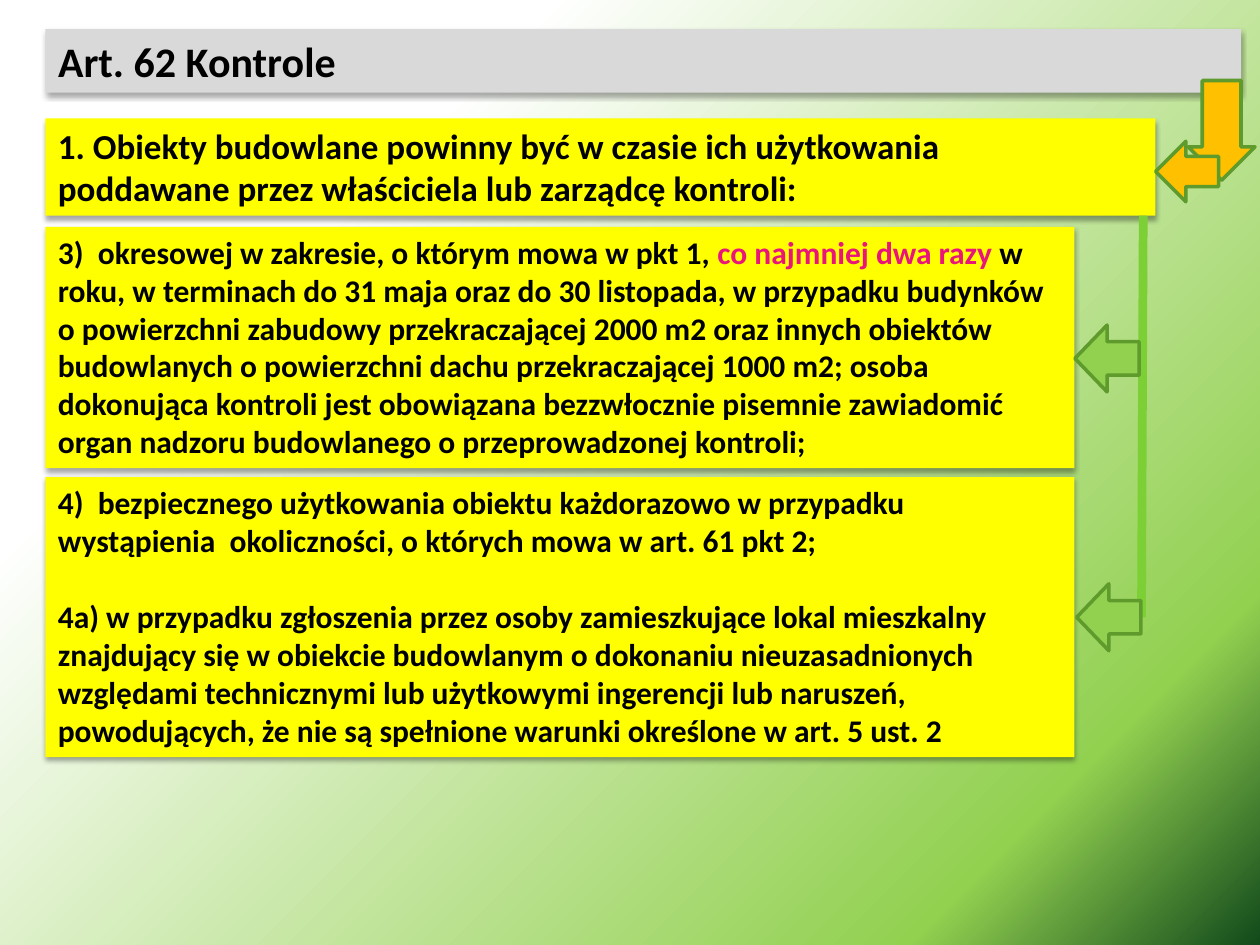
from pptx import Presentation
from pptx.dml.color import RGBColor
from pptx.enum import shapes, text
from pptx.oxml import parse_xml
from pptx.oxml.ns import nsdecls, qn
from pptx.util import Pt

BLACK = RGBColor(0, 0, 0)
PINK = RGBColor(0xEA, 0x15, 0x7A)
GREY = RGBColor(0xD9, 0xD9, 0xD9)
YELLOW = RGBColor(0xFF, 0xFF, 0)
ORANGE = RGBColor(0xFF, 0xC0, 0)
GREEN = RGBColor(0x92, 0xD0, 0x50)
DARK = RGBColor(0x12, 0x4A, 0x1B)
WHITE = RGBColor(0xFF, 0xFF, 0xFF)
EDGE = RGBColor(0x5E, 0x9B, 0x2C)
STEM = RGBColor(0x7C, 0xD0, 0x36)

LEFT = 26
INTRO = ["1. Obiekty budowlane powinny być w czasie ich użytkowania",
         "poddawane przez właściciela lub zarządcę kontroli:"]
TWICE = "co najmniej dwa razy "
POINT3 = ["3) \u00a0okresowej w zakresie, o którym mowa w pkt 1, " + TWICE +
          "w roku, w terminach do 31 maja oraz do 30 listopada, w przypadku "
          "budynków o powierzchni zabudowy przekraczającej 2000 m2 oraz innych "
          "obiektów budowlanych o powierzchni dachu przekraczającej 1000 m2; "
          "osoba dokonująca kontroli jest obowiązana bezzwłocznie pisemnie "
          "zawiadomić organ nadzoru budowlanego o przeprowadzonej kontroli;"]
POINT4 = ["4) \u00a0bezpiecznego użytkowania obiektu każdorazowo w przypadku "
          "wystąpienia  okoliczności, o których mowa w art. 61 pkt 2;",
          "4a) w przypadku zgłoszenia przez osoby zamieszkujące lokal mieszkalny "
          "znajdujący się w obiekcie budowlanym o dokonaniu nieuzasadnionych "
          "względami technicznymi lub użytkowymi ingerencji lub naruszeń, "
          "powodujących, że nie są spełnione warunki określone w art. 5 ust. 2"]


def paint_back(slide):
    """Circular gradient spreading from the bottom right corner."""
    slide.background.fill.gradient()
    old = slide.element.find(".//" + qn("a:gradFill"))
    stops = "".join(
        f'<a:gs pos="{pos * 1000}"><a:srgbClr val="{color}"/></a:gs>'
        for pos, color in ((0, DARK), (16, GREEN), (75, WHITE)))
    old.getparent().replace(old, parse_xml(
        f'<a:gradFill {nsdecls("a")} rotWithShape="1"><a:gsLst>{stops}</a:gsLst>'
        '<a:path path="circle"><a:fillToRect l="100000" t="100000"/></a:path>'
        '</a:gradFill>'))


def place(shape, box):
    shape.left, shape.top, shape.width, shape.height = map(Pt, box)


def add_shade(shape):
    shape.element.spPr.append(parse_xml(
        f'<a:effectLst {nsdecls("a")}><a:outerShdw blurRad="{Pt(3.1)}" '
        f'dist="{Pt(1.8)}" dir="5400000" rotWithShape="0"><a:srgbClr val="000000">'
        '<a:alpha val="35000"/></a:srgbClr></a:outerShdw></a:effectLst>'))


def fill_panel(panel, box, lines, size, color, gap=0, mark=None):
    """Style a panel; mark is a phrase of the text to set in pink."""
    place(panel, box)
    panel.fill.solid()
    panel.fill.fore_color.rgb = color
    panel.line.fill.background()
    add_shade(panel)
    frame = panel.text_frame
    frame.text = "\n".join(lines)
    frame.word_wrap = True
    frame.auto_size = text.MSO_AUTO_SIZE.NONE
    frame.vertical_anchor = text.MSO_ANCHOR.TOP
    for n, para in enumerate(frame.paragraphs):
        para.alignment = text.PP_ALIGN.LEFT
        para.line_spacing = 1.0
        para.space_before = Pt(gap if n else 0)
        if mark and mark in para.text:
            head, tail = para.text.split(mark)
            para.runs[0].text = head
            for part in (mark, tail):
                para.add_run().text = part
        for run in para.runs:
            font = run.font
            font.name, font.size, font.bold = "Calibri", Pt(size), True
            font.color.rgb = PINK if run.text == mark else BLACK


def add_panel(slide, *args, **extra):
    panel = slide.shapes.add_shape(
        shapes.MSO_SHAPE.RECTANGLE, 0, 0, Pt(1), Pt(1))
    fill_panel(panel, *args, **extra)


def add_arrow(slide, box, color, turn=90, neck=0.5):
    arrow = slide.shapes.add_shape(
        shapes.MSO_SHAPE.DOWN_ARROW, *map(Pt, box))
    arrow.adjustments[0] = neck
    arrow.rotation = turn
    arrow.shadow.inherit = False
    arrow.fill.solid()
    arrow.fill.fore_color.rgb = color
    arrow.line.color.rgb = EDGE
    arrow.line.width = Pt(2)


def add_stem(slide, start, end):
    stem = slide.shapes.add_connector(
        shapes.MSO_CONNECTOR.STRAIGHT, *map(Pt, start + end))
    stem.line.color.rgb = STEM
    stem.line.width = Pt(5)
    stem.element.spPr.append(parse_xml(f'<a:effectLst {nsdecls("a")}/>'))


def build_slide(deck):
    slide = deck.slides.add_slide(deck.slide_layouts[5])
    paint_back(slide)
    fill_panel(slide.shapes.title, (LEFT, 16.6, 683.3, 36.3),
               ["Art. 62 Kontrole"], 24, GREY)
    add_arrow(slide, (679, 46, 38.2, 57), ORANGE, turn=0, neck=0.58)
    add_panel(slide, (LEFT, 67.6, 634.3, 55.7), INTRO, 20, YELLOW)
    add_arrow(slide, (661, 80, 34.6, 36), ORANGE)
    add_panel(slide, (LEFT, 129.6, 588, 138), POINT3, 18, YELLOW, mark=TWICE)
    add_stem(slide, (653.3, 123.3), (652.3, 352.8))
    add_arrow(slide, (613.5, 186.5, 38.2, 36.7), GREEN)
    add_panel(slide, (LEFT, 272.7, 588, 160), POINT4, 18, YELLOW, gap=22)
    add_arrow(slide, (614.5, 334.4, 38.2, 36.7), GREEN)


def main():
    deck = Presentation()
    deck.slide_width, deck.slide_height = Pt(720), Pt(540)
    build_slide(deck)
    deck.save("out.pptx")


if __name__ == "__main__":
    main()
